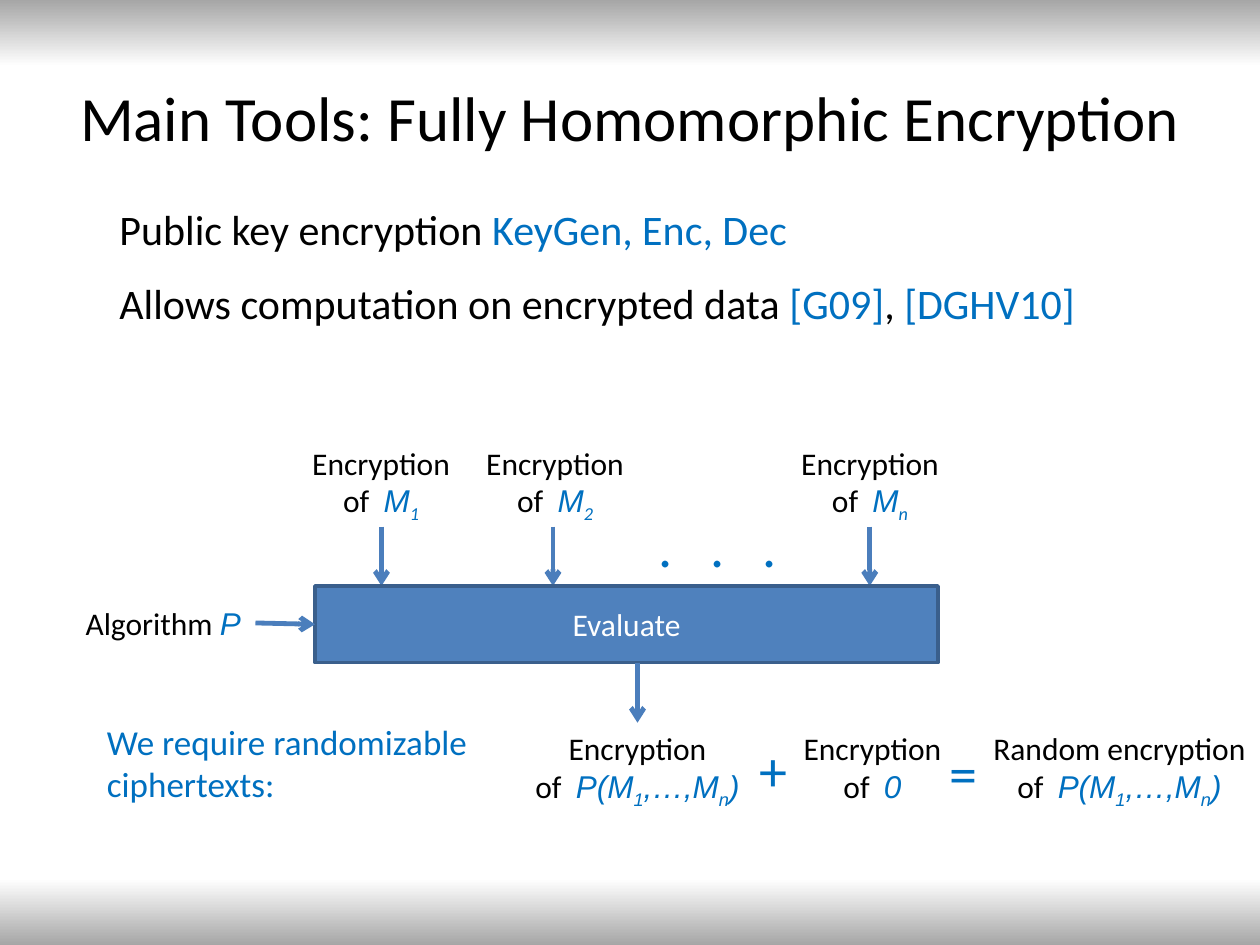
from copy import deepcopy
from typing import NamedTuple

from pptx import Presentation
from pptx import util as u
from pptx.dml.color import RGBColor
from pptx.enum import shapes, text
from pptx.oxml.ns import qn
from pptx.oxml.xmlchemy import OxmlElement

COLORS = {
    "ink": "000000", "accent": "0070C0", "white": "FFFFFF", "edge": "A6A6A6",
    "bar": "4F81BD", "bar_line": "3A5F8C", "arrow": "4B7EBC",
}


class Span(NamedTuple):
    text: str
    color: str = "ink"
    font: str = "Calibri"
    italic: bool = False
    subscript: bool = False


class Label(NamedTuple):
    frame: tuple[float, float, float, float]
    lines: list[list[Span]]
    size: float = 18
    align: text.PP_ALIGN = text.PP_ALIGN.LEFT
    wrap: bool = False
    grow: bool = True


class Arrow(NamedTuple):
    start: tuple[float, float]
    end: tuple[float, float]


def color(name: str) -> RGBColor:
    return RGBColor.from_string(COLORS[name])


def points(values) -> list:
    return [u.Pt(value) for value in values]


def blue(words: str) -> Span:
    return Span(words, "accent")


def math(words: str, subscript: bool = False, font: str = "Arial") -> Span:
    return Span(words, "accent", font, True, subscript)


def write_lines(frame, label: Label) -> None:
    for index, spans in enumerate(label.lines):
        para = frame.add_paragraph() if index else frame.paragraphs[0]
        para.alignment = label.align
        for part in spans:
            span = para.add_run()
            span.text = part.text
            formats = {"size": u.Pt(label.size), "name": part.font, "italic": part.italic}
            for name, value in formats.items():
                setattr(span.font, name, value)
            span.font.color.rgb = color(part.color)
            if part.subscript:
                span.font._element.set("baseline", "-25000")


def add_label(page, label: Label) -> None:
    box = page.shapes.add_textbox(*points(label.frame))
    sizing = text.MSO_AUTO_SIZE
    formats = {
        "word_wrap": label.wrap,
        "auto_size": sizing.SHAPE_TO_FIT_TEXT if label.grow else sizing.NONE,
        "vertical_anchor": text.MSO_ANCHOR.TOP if label.grow else text.MSO_ANCHOR.MIDDLE,
    }
    for name, value in formats.items():
        setattr(box.text_frame, name, value)
    write_lines(box.text_frame, label)


def add_arrow(page, arrow: Arrow):
    line = page.shapes.add_connector(
        shapes.MSO_CONNECTOR.STRAIGHT, *points(arrow.start + arrow.end))
    line.line.color.rgb = color("arrow")
    line.line.width = u.Pt(2.75)
    tail = OxmlElement("a:tailEnd")
    tail.set("type", "arrow")
    line.line._get_or_add_ln().append(tail)
    line._element.spPr.append(OxmlElement("a:effectLst"))
    return line


def add_bar(page, label: Label):
    bar = page.shapes.add_shape(shapes.MSO_SHAPE.RECTANGLE, *points(label.frame))
    bar.shadow.inherit = False
    bar.fill.solid()
    bar.fill.fore_color.rgb = color("bar")
    bar.line.color.rgb = color("bar_line")
    bar.line.width = u.Pt(2)
    bar.text_frame.vertical_anchor = text.MSO_ANCHOR.MIDDLE
    write_lines(bar.text_frame, label)
    return bar


def paint_background(page) -> None:
    fill = page.background.fill
    fill.gradient()
    fill.gradient_angle = 90
    stop_list = next(page._element.iter(qn("a:gsLst")))
    for stop in list(stop_list):
        stop_list.append(deepcopy(stop))
    bands = [(0, "edge"), (0.07, "white"), (0.93, "white"), (1, "edge")]
    for stop, (position, name) in zip(fill.gradient_stops, bands):
        stop.position = position
        stop.color.rgb = color(name)


def main() -> None:
    deck = Presentation()
    deck.slide_width, deck.slide_height = u.Pt(720), u.Pt(540)
    page = deck.slides.add_slide(deck.slide_layouts[6])
    paint_background(page)
    center = text.PP_ALIGN.CENTER

    # Title and statements
    add_label(page, Label((36, 21.6, 648, 90),
                          [[Span("Main Tools: Fully Homomorphic Encryption")]],
                          36, center, wrap=True, grow=False))
    add_label(page, Label((61.2, 112.5, 405, 36),
                          [[Span("Public key encryption "), blue("KeyGen, Enc, Dec")]], 24))
    add_label(page, Label((61.2, 155, 565, 36),
                          [[Span("Allows computation on encrypted data "), blue("[G09]"),
                            Span(", "), blue("[DGHV10]")]], 24))

    # Encrypted inputs with their arrows
    bar_top, bar_bottom, input_top, label_height = 334.8, 378.7, 250, 51
    inputs = [("1", 170.6, 218), ("2", 270, 316), ("n", 450, 497)]
    for index, left, arrow_x in inputs:
        add_label(page, Label((left, input_top, 94.3, label_height),
                              [[Span("Encryption")],
                               [Span("of  "), math("M"), math(index, True, "Calibri")]],
                              align=center))
        add_arrow(page, Arrow((arrow_x, input_top + label_height), (arrow_x, bar_top)))
    add_label(page, Label((369.4, 288.7, 83, 46), [[blue(".   .   .")]], 32))

    # Evaluation bar, algorithm and output arrow
    bar = add_bar(page, Label((180, bar_top, 356, bar_bottom - bar_top),
                              [[Span("Evaluate", "white")]], align=center))
    add_label(page, Label((41.8, 341.5, 104.4, 29), [[Span("Algorithm "), math("P")]]))
    add_arrow(page, Arrow((146, 356), (180, 356))).end_connect(bar, 1)
    add_arrow(page, Arrow((364.3, bar_bottom), (364.3, 413)))

    # Randomized result
    result = [Span("of  "), math("P(M"), math("1", True), math(",…,M"),
              math("n", True), math(")")]
    terms = [
        (295.5, 137.5, "Encryption", result, False),
        (451.4, 94.3, "Encryption", [Span("of  "), math("0")], False),
        (559.4, 160.6, "Random encryption", result, True),
    ]
    for left, width, heading, detail, wrap in terms:
        add_label(page, Label((left, 413.3, width, label_height),
                              [[Span(heading)], detail], align=center, wrap=wrap))
    for sign, left, top in [("+", 427, 417), ("=", 535.7, 418.3)]:
        add_label(page, Label((left, top, 31, 46), [[blue(sign)]], 32))
    add_label(page, Label((54, 408.2, 222.5, 55.4),
                          [[blue("We require randomizable")], [blue("ciphertexts:")]], 20))

    deck.save("out.pptx")


if __name__ == "__main__":
    main()
